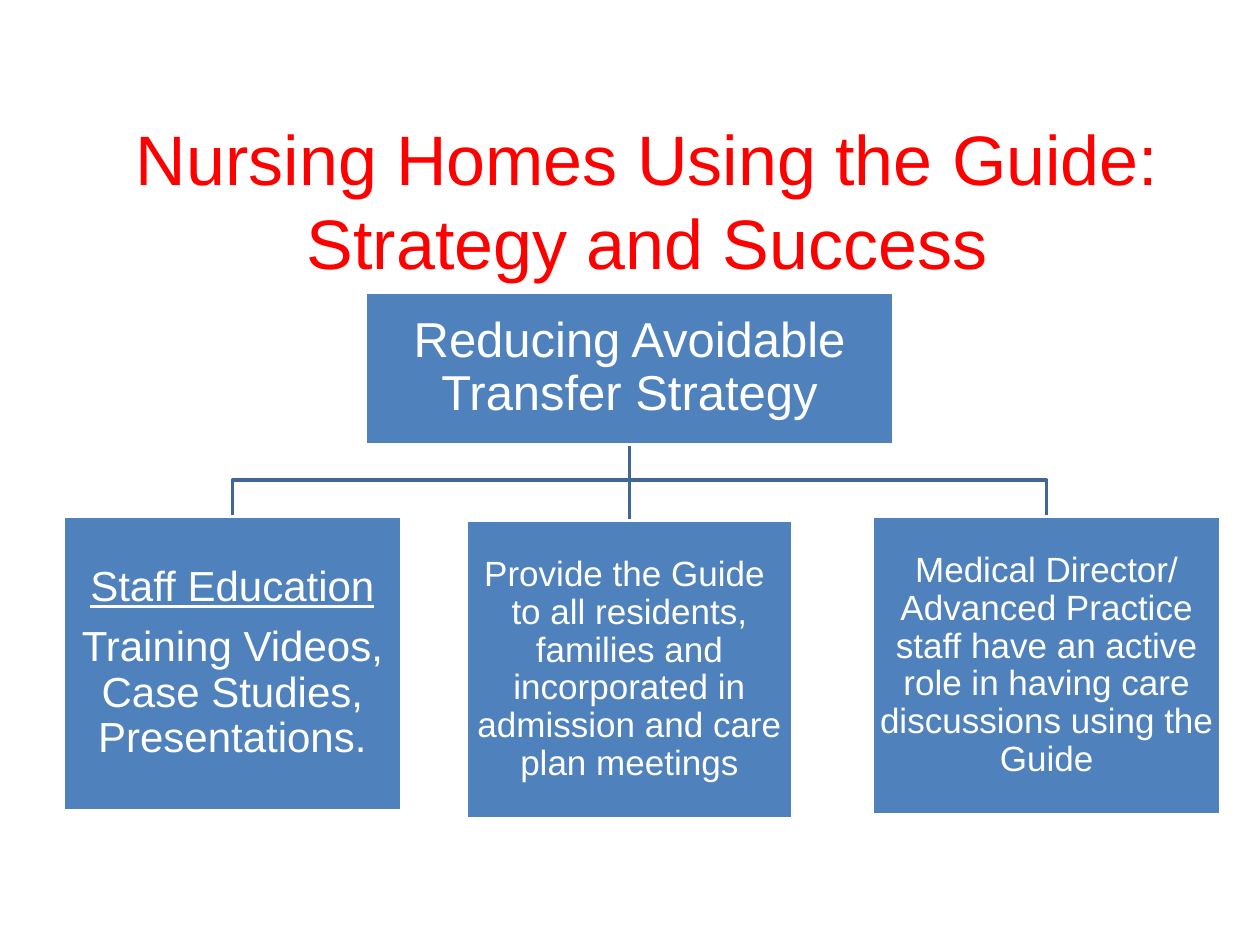
from pptx import Presentation
from pptx.dml.color import RGBColor
from pptx.enum.shapes import MSO_CONNECTOR, MSO_SHAPE
from pptx.enum.text import MSO_ANCHOR, MSO_AUTO_SIZE, PP_ALIGN
from pptx.util import Cm, Pt
from lxml import etree

RED = RGBColor(0xFF, 0x00, 0x00)
WHITE = RGBColor(0xFF, 0xFF, 0xFF)
BLUE = RGBColor(0x4F, 0x81, 0xBD)
NAVY = RGBColor(0x3F, 0x67, 0x97)
RECT = MSO_SHAPE.RECTANGLE
LINE = MSO_CONNECTOR.STRAIGHT
MIDDLE = MSO_ANCHOR.MIDDLE
CENTER = PP_ALIGN.CENTER
NOFIT = MSO_AUTO_SIZE.NONE
EFFECT = "{http://schemas.openxmlformats.org/drawingml/2006/main}effectLst"
TOP, BOTTOM = 0, 2


def apply(item, values):
    for name, value in values.items():
        setattr(item, name, value)


class Deck:
    font = "Arial"
    width = Pt(2)

    def __init__(self, wide, high):
        self.file = Presentation()
        apply(self.file, {"slide_width": Cm(wide), "slide_height": Cm(high)})
        self.slide = self.file.slides.add_slide(self.file.slide_layouts[5])
        self.shapes = self.slide.shapes

    def style(self, para, size, color, spacing):
        apply(para, {"alignment": CENTER, "line_spacing": spacing})
        apply(para.font, {"name": self.font, "size": Pt(size)})
        para.font.color.rgb = color

    def stroke(self, shape, color):
        shape.line.color.rgb = color
        shape.line.width = self.width

    def title(self, text, left, top, wide, high):
        shape = self.shapes.title
        apply(shape, {"left": Cm(left), "top": Cm(top),
                      "width": Cm(wide), "height": Cm(high)})
        frame = shape.text_frame
        apply(frame, {"text": text, "vertical_anchor": MIDDLE,
                      "word_wrap": True, "auto_size": NOFIT})
        self.style(frame.paragraphs[0], 40, RED, 1.0)

    def box(self, lines, size, left, top, wide, high, gap=0, under=False):
        shape = self.shapes.add_shape(RECT, Cm(left), Cm(top), Cm(wide), Cm(high))
        shape.shadow.inherit = False
        shape.fill.solid()
        shape.fill.fore_color.rgb = BLUE
        self.stroke(shape, WHITE)
        frame = shape.text_frame
        apply(frame, {"text": "\n".join(lines), "vertical_anchor": MIDDLE,
                      "word_wrap": True})
        sides = ("left", "top", "right", "bottom")
        apply(frame, {f"margin_{side}": Cm(0.04) for side in sides})
        for para in frame.paragraphs:
            self.style(para, size, WHITE, 0.9)
        first = frame.paragraphs[0]
        first.space_after = Pt(gap)
        first.font.underline = under
        return shape

    def back(self, shape):
        self.shapes.element.insert(2, shape.element)

    def link(self, start, end):
        wire = self.shapes.add_connector(LINE, 0, 0, 0, 0)
        wire.begin_connect(start, BOTTOM)
        wire.end_connect(end, TOP)
        self.stroke(wire, NAVY)
        etree.SubElement(wire.element.spPr, EFFECT)
        self.back(wire)

    def branch(self, start, end, level):
        mid = start.left + start.width // 2
        tip = end.left + end.width // 2
        turn = Cm(level)
        pen = self.shapes.build_freeform(mid, start.top + start.height)
        pen.add_line_segments([(mid, turn), (tip, turn), (tip, end.top)], close=False)
        wire = pen.convert_to_shape()
        wire.shadow.inherit = False
        wire.fill.background()
        self.stroke(wire, NAVY)
        self.back(wire)


def main():
    deck = Deck(25.4, 19.05)
    deck.title("Nursing Homes Using the Guide:\vStrategy and Success",
               1.96, 2.03, 22.17, 3.99)
    root = deck.box(["Reducing Avoidable Transfer Strategy"], 28,
                    7.37, 5.89, 10.64, 3.07)
    staff = deck.box(["Staff Education",
                      "Training Videos, Case Studies, Presentations."], 24,
                     1.27, 10.41, 6.83, 5.94, gap=8.4, under=True)
    guide = deck.box(["Provide the Guide ",
                      "to all residents, families and incorporated in "
                      "admission and care plan meetings"], 20,
                     9.4, 10.49, 6.58, 6.02)
    doctor = deck.box(["Medical Director/",
                       "Advanced Practice staff have an active role in "
                       "having care discussions using the Guide"], 20,
                      17.58, 10.41, 7.04, 6.02)
    for side in (staff, doctor):
        deck.branch(root, side, 9.68)
    deck.link(root, guide)
    deck.file.save("out.pptx")


if __name__ == "__main__":
    main()
